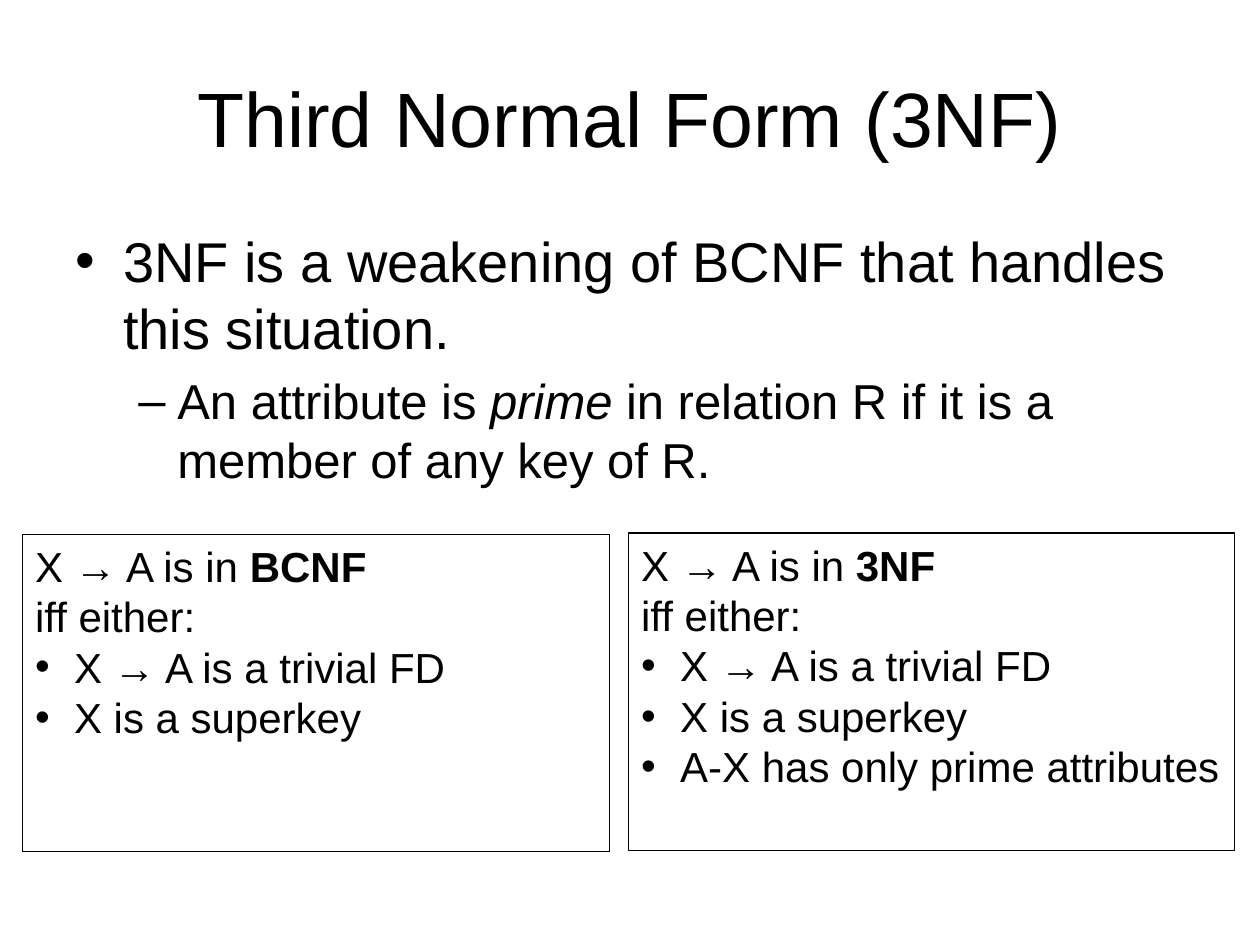
import pptx
import pptx.dml.color
import pptx.enum.shapes
import pptx.enum.text
import pptx.util
import lxml.etree

Inches = pptx.util.Inches
Pt = pptx.util.Pt
ANCHOR = pptx.enum.text.MSO_ANCHOR
ALIGN = pptx.enum.text.PP_ALIGN
INK = "000000"


def color(code):
    """Turn a hex string into a colour."""
    return pptx.dml.color.RGBColor.from_string(code)


def bullet(para, char, left, hang):
    """Give a paragraph a bullet with a hanging indent."""
    props = para._p.get_or_add_pPr()
    props.set("marL", str(Inches(left)))
    props.set("indent", str(-Inches(hang)))
    tag = pptx.oxml.ns.qn("a:buFont")
    lxml.etree.SubElement(props, tag, typeface="Arial")
    tag = pptx.oxml.ns.qn("a:buChar")
    lxml.etree.SubElement(props, tag, char=char)


def write(frame, size, *parts):
    """Write one paragraph of runs and return it."""
    first = frame.paragraphs[0]
    para = frame.add_paragraph() if first.runs else first
    para.alignment = ALIGN.LEFT
    para.font.size = Pt(size)
    para.font.name = "Arial"
    para.font.color.rgb = color(INK)
    for part in parts:
        para.add_run().text = part
    return para


def text_box(slide, left, top, width, height):
    """Add a wrapping text box and return its frame."""
    box = slide.shapes.add_textbox(
        Inches(left), Inches(top), Inches(width), Inches(height))
    box.text_frame.word_wrap = True
    return box.text_frame


def title(slide, text):
    """Add the centred slide title."""
    frame = text_box(slide, 0.5, 0.3, 9, 1.25)
    frame.vertical_anchor = ANCHOR.MIDDLE
    write(frame, 44, text).alignment = ALIGN.CENTER


def body(slide):
    """Add the main point and its definition."""
    frame = text_box(slide, 0.5, 1.75, 9, 2.24)
    point = write(
        frame, 32, "3NF is a weakening of BCNF that handles this situation.")
    point.space_before = Pt(6.4)
    bullet(point, "•", 0.38, 0.38)
    note = write(frame, 28, "An attribute is ", "prime",
                 " in relation R if it is a member of any key of R.")
    note.space_before = Pt(5.6)
    note.runs[1].font.italic = True
    bullet(note, "–", 0.81, 0.31)


def rule_box(slide, left, top, width, form, tests):
    """Add an outlined box that lists the tests of a normal form."""
    box = slide.shapes.add_shape(
        pptx.enum.shapes.MSO_SHAPE.RECTANGLE,
        Inches(left), Inches(top), Inches(width), Inches(2.52))
    box.shadow.inherit = False
    box.fill.background()
    box.line.color.rgb = color(INK)
    box.line.width = Pt(0.75)
    frame = box.text_frame
    frame.word_wrap = True
    frame.vertical_anchor = ANCHOR.TOP
    frame.margin_right = Inches(0.05)
    head = write(frame, 24, "X → A is in ", form)
    head.runs[1].font.bold = True
    write(frame, 24, "iff either:")
    for test in tests:
        bullet(write(frame, 24, test), "•", 0.31, 0.31)


def main():
    """Build the slide and save it."""
    deck = pptx.Presentation()
    deck.slide_width = Inches(10)
    deck.slide_height = Inches(7.5)
    slide = deck.slides.add_slide(deck.slide_layouts[6])
    title(slide, "Third Normal Form (3NF)")
    body(slide)
    tests = ["X → A is a trivial FD", "X is a superkey"]
    rule_box(slide, 0.18, 4.24, 4.66, "BCNF", tests)
    rule_box(slide, 4.99, 4.23, 4.81, "3NF",
             tests + ["A-X has only prime attributes"])
    deck.save("out.pptx")


if __name__ == "__main__":
    main()
